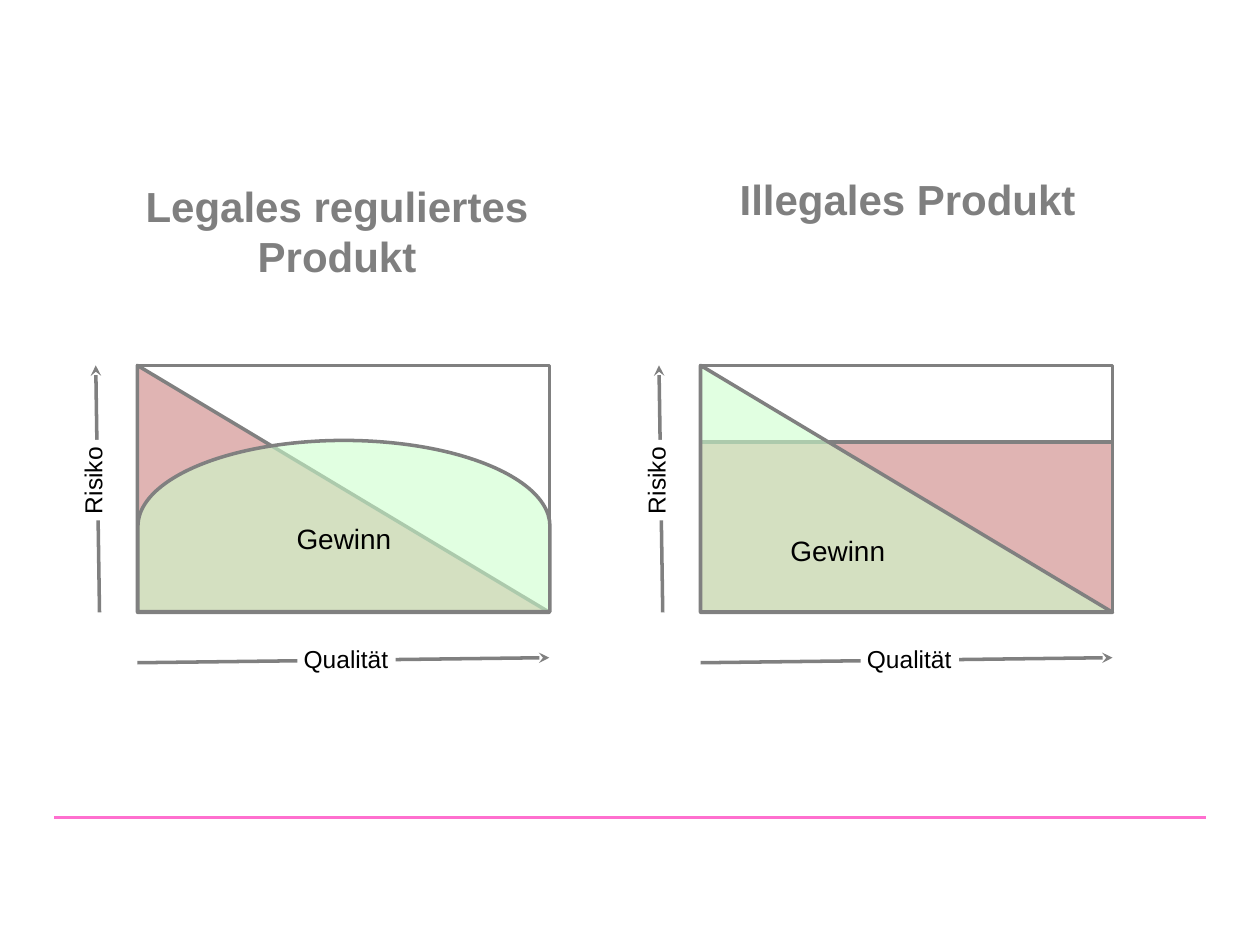
from lxml.etree import SubElement
from pptx import Presentation
from pptx.dml.color import RGBColor
from pptx.enum.shapes import MSO_CONNECTOR, MSO_SHAPE
from pptx.enum.text import MSO_ANCHOR, PP_ALIGN
from pptx.oxml.ns import qn
from pptx.util import Inches, Pt

GRAY = RGBColor(0x80, 0x80, 0x80)
HEADING_GRAY = RGBColor(0x7F, 0x7F, 0x7F)
PINK = RGBColor(0xFF, 0x6F, 0xCF)
RISK_RED = RGBColor(0xE0, 0xB4, 0xB3)
PROFIT_GREEN = RGBColor(0xCC, 0xFF, 0xCC)
BLACK = RGBColor(0, 0, 0)
WHITE = RGBColor(0xFF, 0xFF, 0xFF)

LEFT_PLOT, RIGHT_PLOT = 1.09, 5.56
PLOT_TOP, PLOT_WIDTH, PLOT_HEIGHT = 2.9, 3.27, 1.96
PLOT_BOTTOM = PLOT_TOP + PLOT_HEIGHT


def write(shape, text, size, color=BLACK, bold=False, align=PP_ALIGN.LEFT):
    frame = shape.text_frame
    frame.margin_left = frame.margin_right = Inches(0.05)
    frame.margin_top = frame.margin_bottom = Inches(0.05)
    frame.text = text
    for para in frame.paragraphs:
        para.alignment = align
        for span in para.runs:
            span.font.name = "Arial"
            span.font.size = Pt(size)
            span.font.bold = bold
            span.font.color.rgb = color


def add_label(slide, text, left, top, width, height, size, **style):
    box = slide.shapes.add_textbox(
        Inches(left), Inches(top), Inches(width), Inches(height))
    box.text_frame.word_wrap = False
    write(box, text, size, **style)
    return box


def add_area(slide, kind, left, top, width, height, fill=None):
    area = slide.shapes.add_shape(
        kind, Inches(left), Inches(top), Inches(width), Inches(height))
    area.shadow.inherit = False
    area.line.color.rgb = GRAY
    area.line.width = Pt(2)
    if fill is None:
        area.fill.background()
    else:
        area.fill.solid()
        area.fill.fore_color.rgb = fill
    return area


def make_profit(area):
    """Let the risk area show through and name the area."""
    color = area.fill._xPr.find(qn("a:solidFill"))[0]
    SubElement(color, qn("a:alpha"), val="59000")
    write(area, "Gewinn", 16, align=PP_ALIGN.CENTER)
    area.text_frame.vertical_anchor = MSO_ANCHOR.MIDDLE


def add_line(slide, start, end, color=GRAY, arrow=False):
    line = slide.shapes.add_connector(
        MSO_CONNECTOR.STRAIGHT, *map(Inches, start + end))
    line.line.color.rgb = color
    line.line.width = Pt(2)
    if arrow:
        SubElement(line.line._get_or_add_ln(), qn("a:tailEnd"), type="stealth")
    SubElement(line._element.spPr, qn("a:effectLst"))


def add_axis(slide, start, end, text, label_at, rotation=0):
    add_line(slide, start, end, arrow=True)
    label = add_label(slide, text, *label_at, size=14)
    label.rotation = rotation
    label.fill.solid()
    label.fill.fore_color.rgb = WHITE


def add_frame_and_axes(slide, left):
    add_area(slide, MSO_SHAPE.RECTANGLE, left, PLOT_TOP, PLOT_WIDTH, PLOT_HEIGHT)
    add_axis(slide, (left, 5.26), (left + PLOT_WIDTH, 5.22),
             "Qualität", (left + 1.27, 5.06, 0.78, 0.34))
    add_axis(slide, (left - 0.3, PLOT_BOTTOM), (left - 0.33, PLOT_TOP),
             "Risiko", (left - 0.67, 3.64, 0.64, 0.34), rotation=270)


def add_legal_plot(slide):
    add_area(slide, MSO_SHAPE.RIGHT_TRIANGLE, LEFT_PLOT, PLOT_TOP,
             PLOT_WIDTH, PLOT_HEIGHT, RISK_RED)
    add_frame_and_axes(slide, LEFT_PLOT)
    profit = add_area(slide, MSO_SHAPE.FLOWCHART_DELAY, 2.05, 2.54,
                      1.36, PLOT_WIDTH, PROFIT_GREEN)
    profit.rotation = 270
    make_profit(profit)
    profit.text_frame._txBody.bodyPr.set("vert", "vert")


def add_illegal_plot(slide):
    add_area(slide, MSO_SHAPE.RECTANGLE, RIGHT_PLOT, 3.51,
             PLOT_WIDTH, PLOT_BOTTOM - 3.51, RISK_RED)
    profit = add_area(slide, MSO_SHAPE.RIGHT_TRIANGLE, RIGHT_PLOT, PLOT_TOP,
                      PLOT_WIDTH, PLOT_HEIGHT, PROFIT_GREEN)
    make_profit(profit)
    add_frame_and_axes(slide, RIGHT_PLOT)


def main():
    deck = Presentation()
    deck.slide_width, deck.slide_height = Inches(10), Inches(7.5)
    slide = deck.slides.add_slide(deck.slide_layouts[6])
    add_line(slide, (0.43, 6.49), (9.57, 6.49), PINK)
    heading = dict(size=24, color=HEADING_GRAY, bold=True)
    add_label(slide, "Legales reguliertes\nProdukt", 1.09, 1.38, 3.17, 0.91,
              align=PP_ALIGN.CENTER, **heading)
    add_label(slide, "Illegales Produkt", 5.82, 1.33, 2.79, 0.5, **heading)
    add_legal_plot(slide)
    add_illegal_plot(slide)
    deck.save("out.pptx")


if __name__ == "__main__":
    main()
